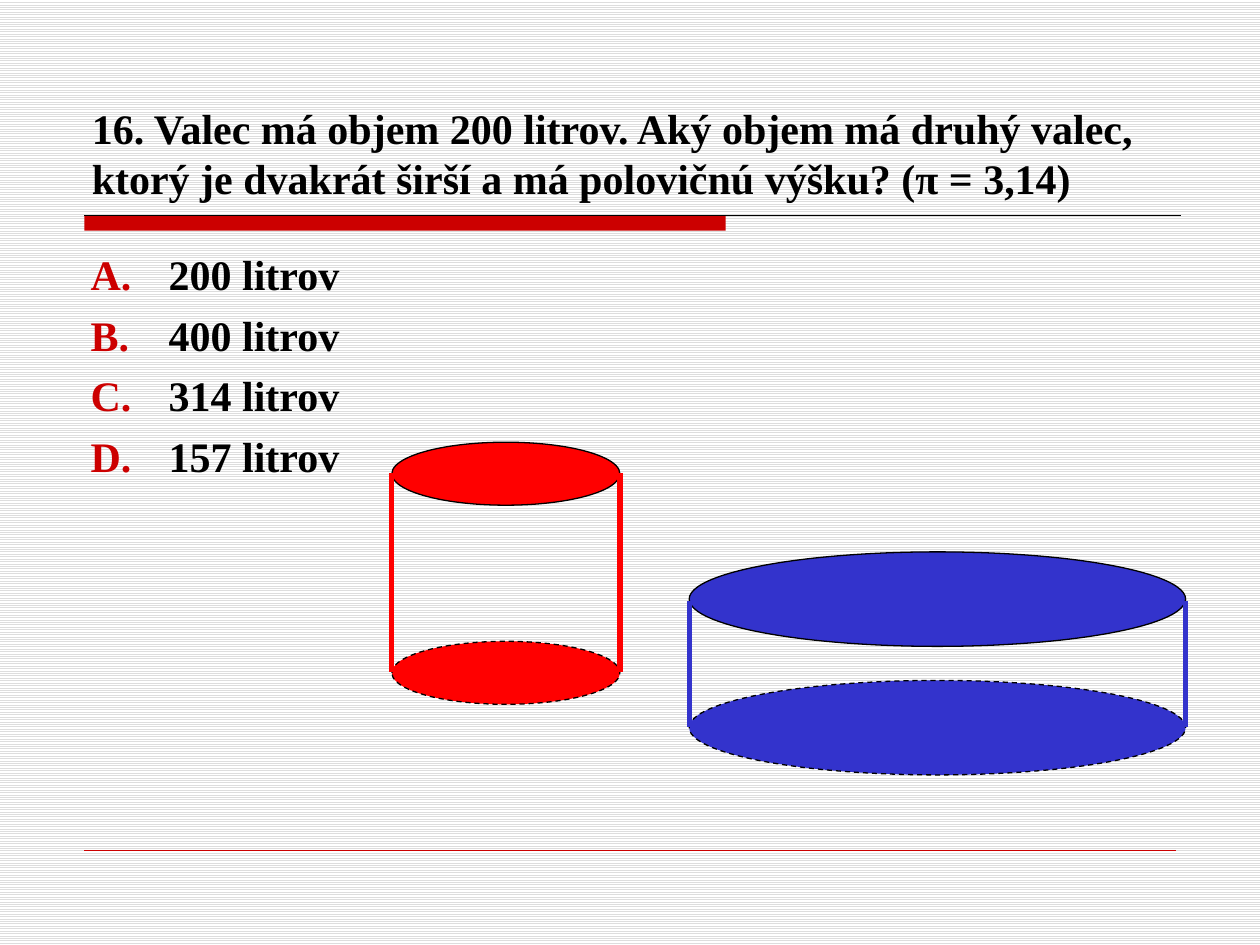
from lxml.etree import SubElement
from pptx import Presentation
from pptx.dml.color import RGBColor
from pptx.enum.dml import MSO_LINE, MSO_PATTERN
from pptx.enum.shapes import MSO_CONNECTOR, MSO_SHAPE
from pptx.enum.text import MSO_ANCHOR
from pptx.oxml.ns import qn
from pptx.util import Inches, Pt

COLORS = {"stripe": "DDDDDD", "paper": "FFFFFF", "text": "000000",
          "accent": "CC0000", "red": "FF0000", "blue": "3333CC"}
FONT = {"name": "Times New Roman", "size": Pt(24), "bold": True}


def color(name):
    return RGBColor.from_string(COLORS[name])


def add_line(x1, y1, x2, y2, color_name, width):
    line = slide.shapes.add_connector(
        MSO_CONNECTOR.STRAIGHT, Inches(x1), Inches(y1), Inches(x2), Inches(y2))
    line.line.color.rgb = color(color_name)
    line.line.width = Pt(width)
    SubElement(line._element.spPr, qn("a:effectLst"))


presentation = Presentation()
presentation.slide_width, presentation.slide_height = Inches(10), Inches(7.5)
slide = presentation.slides.add_slide(presentation.slide_layouts[6])

background = slide.background.fill
background.patterned()
background.pattern = MSO_PATTERN.LIGHT_HORIZONTAL
background.fore_color.rgb = color("stripe")
background.back_color.rgb = color("paper")

# Title bar and rules
bar = slide.shapes.add_shape(
    MSO_SHAPE.RECTANGLE, Inches(0.67), Inches(1.71), Inches(5.09), Inches(0.12))
bar.shadow.inherit = False
bar.fill.solid()
bar.fill.fore_color.rgb = color("accent")
bar.line.fill.background()
add_line(0.67, 1.71, 9.37, 1.71, "text", 0.5)
add_line(0.67, 6.75, 9.33, 6.75, "accent", 0.25)

# Question and answers
question = ("16. Valec má objem 200 litrov. Aký objem má druhý valec, "
            "ktorý je dvakrát širší a má polovičnú výšku? (π = 3,14)")
answers = [f"{volume} litrov" for volume in (200, 400, 314, 157)]
for left, top, height, anchor, lines in (
        (0.63, 0.33, 1.33, MSO_ANCHOR.BOTTOM, [question]),
        (0.62, 1.92, 4.67, MSO_ANCHOR.TOP, answers)):
    box = slide.shapes.add_textbox(
        Inches(left), Inches(top), Inches(8.75), Inches(height))
    frame = box.text_frame
    frame.word_wrap = True
    frame.vertical_anchor = anchor
    frame.text = "\n".join(lines)
    for paragraph in frame.paragraphs:
        font = paragraph.runs[0].font
        for attribute, value in FONT.items():
            setattr(font, attribute, value)
        font.color.rgb = color("text")
        if lines is answers:
            paragraph.space_before = Pt(6)
            properties = paragraph._p.get_or_add_pPr()
            properties.set("marL", str(Inches(0.62)))
            properties.set("indent", str(-Inches(0.62)))
            bullet_color = SubElement(properties, qn("a:buClr"))
            SubElement(bullet_color, qn("a:srgbClr"), val=COLORS["accent"])
            SubElement(properties, qn("a:buFont"), typeface=FONT["name"])
            SubElement(properties, qn("a:buAutoNum"), type="alphaUcPeriod")

# Cylinders: left, width, ellipse height, ellipse tops, side ends, colour
cylinders = [(3.11, 1.81, 0.5, (3.51, 5.09), (3.75, 5.33), "red"),
             (5.47, 3.94, 0.75, (4.38, 5.4), (4.77, 5.77), "blue")]
for left, width, height, tops, (side_top, side_bottom), color_name in cylinders:
    for top, dash in zip(tops, (MSO_LINE.SOLID, MSO_LINE.DASH)):
        ellipse = slide.shapes.add_shape(
            MSO_SHAPE.OVAL, Inches(left), Inches(top), Inches(width), Inches(height))
        ellipse.shadow.inherit = False
        ellipse.fill.solid()
        ellipse.fill.fore_color.rgb = color(color_name)
        ellipse.line.color.rgb = color("text")
        ellipse.line.width = Pt(0.75)
        ellipse.line.dash_style = dash
    for x in (left, left + width):
        add_line(x, side_bottom, x, side_top, color_name, 3)

presentation.save("out.pptx")
